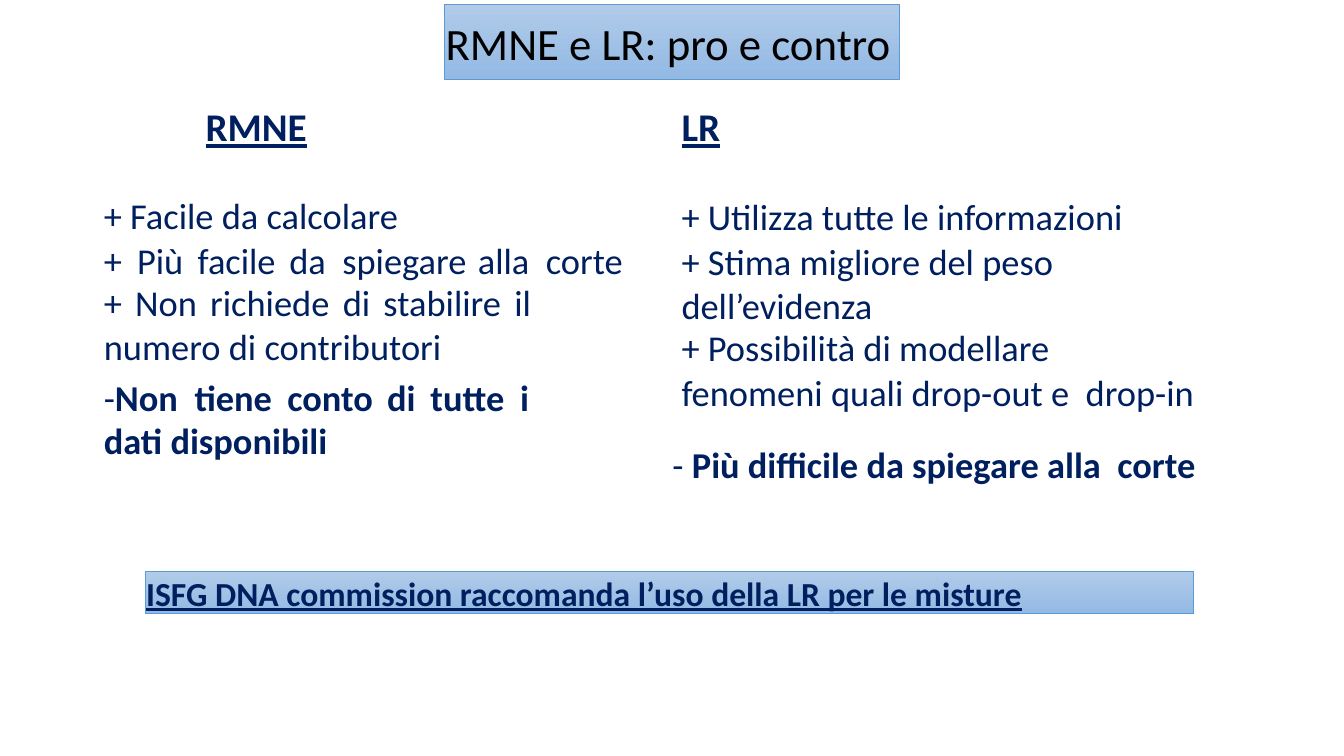
"""Build a slide weighing the pros and cons of RMNE and LR."""
from lxml import etree
from pptx import Presentation
from pptx.dml.color import RGBColor
from pptx.enum.shapes import MSO_SHAPE
from pptx.enum.text import MSO_ANCHOR, PP_ALIGN
from pptx.oxml.ns import qn
from pptx.util import Inches, Pt

RECTANGLE = MSO_SHAPE.RECTANGLE
TOP, MIDDLE = MSO_ANCHOR.TOP, MSO_ANCHOR.MIDDLE
LEFT = PP_ALIGN.LEFT
BLACK = RGBColor(0x00, 0x00, 0x00)
NAVY = RGBColor(0x00, 0x1F, 0x5F)
LIGHT_BLUE = RGBColor(0xB1, 0xCB, 0xE9)
MID_BLUE = RGBColor(0x93, 0xB9, 0xE4)
BORDER_BLUE = RGBColor(0x5B, 0x9B, 0xD5)


def write_paragraph(p, plain, bold="", size=26, color=NAVY, line=None, before=1, tabs=(), gap=0):
    """Fill a paragraph; gap widens the spaces between its words, in points."""
    p.alignment = LEFT
    p.line_spacing = Pt(line) if line else None
    p.space_before = Pt(before)
    if tabs:
        tab_list = etree.SubElement(p._p.get_or_add_pPr(), qn("a:tabLst"))
        for tab in tabs:
            etree.SubElement(tab_list, qn("a:tab"), pos=str(Inches(tab)), algn="l")
    if gap:
        for i, word in enumerate(plain.split(" ")):
            if i:
                r = p.add_run()
                r.text = " "
                r.font._element.set("spc", str(round(gap * 100)))
            p.add_run().text = word
    else:
        p.text = plain
    if bold:
        r = p.add_run()
        r.text = bold
        r.font.bold = True
    for r in p.runs:
        r.font.name = "Calibri"
        r.font.size = Pt(size)
        r.font.color.rgb = color


def set_frame(s, anchor=TOP):
    """Wrap the text of a shape with almost no margins and return its frame."""
    tf = s.text_frame
    tf.word_wrap = True
    tf.margin_left = Inches(0.01)
    tf.margin_top = Inches(0.01)
    tf.margin_right = tf.margin_bottom = 0
    tf.vertical_anchor = anchor
    return tf


prs = Presentation()
prs.slide_width, prs.slide_height = Inches(13.33), Inches(7.5)
slide = prs.slides.add_slide(prs.slide_layouts[6])

banners = [
    ((4.41, 0.04, 4.51, 0.75), MIDDLE, "RMNE e LR: pro e contro", 32, BLACK, False),
    ((1.44, 5.67, 10.4, 0.42), TOP,
     "ISFG DNA commission raccomanda l’uso della LR per le misture", 24, NAVY, True),
]
for box, anchor, text, size, color, strong in banners:
    s = slide.shapes.add_shape(RECTANGLE, *map(Inches, box))
    s.shadow.inherit = False
    s.fill.gradient()
    s.fill.gradient_angle = 270
    for stop, stop_color, position in zip(s.fill.gradient_stops, (LIGHT_BLUE, MID_BLUE), (0, 1)):
        stop.color.rgb = stop_color
        stop.position = position
    s.line.color.rgb = BORDER_BLUE
    s.line.width = Pt(0.5)
    p = set_frame(s, anchor).paragraphs[0]
    write_paragraph(p, text, size=size, color=color)
    p.runs[0].font.bold = p.runs[0].font.underline = strong

for text, left, width in [("RMNE", 2.03, 1.04), ("LR", 6.75, 0.41)]:
    s = slide.shapes.add_textbox(Inches(left), Inches(1.01), Inches(width), Inches(0.5))
    p = set_frame(s).paragraphs[0]
    write_paragraph(p, text, size=28)
    p.runs[0].font.bold = p.runs[0].font.underline = True

arguments = [
    ((1.02, 1.91, 5.25, 1.76), [
        dict(plain="+ Facile da calcolare", line=31.1),
        dict(plain="+\tPiù\tfacile\tda  spiegare\talla  corte", line=31.3,
             tabs=(0.33, 0.93, 1.84, 3.71)),
        dict(plain="+ Non richiede di stabilire il", line=30, before=0, gap=3.5),
        dict(plain="numero di contributori", before=0),
    ]),
    ((1.02, 3.71, 4.77, 1.33), [
        dict(plain="-", bold="Non\ttiene\tconto\tdi\ttutte\ti  dati disponibili",
             tabs=(0.9, 1.82, 2.81, 3.24, 4.13)),
    ]),
    ((6.75, 1.92, 5.73, 2.2), [
        dict(plain="+ Utilizza tutte le informazioni", line=31.1),
        dict(plain="+ Stima migliore del peso\vdell’evidenza", line=31.3),
        dict(plain="+ Possibilità di modellare", line=30, before=0),
        dict(plain="fenomeni quali drop-out e  drop-in", line=31.3),
    ]),
    ((6.66, 4.38, 5.31, 0.45), [
        dict(plain="- ", bold="Più difficile da spiegare alla  corte"),
    ]),
]
for box, paragraphs in arguments:
    tf = set_frame(slide.shapes.add_textbox(*map(Inches, box)))
    for i, paragraph in enumerate(paragraphs):
        p = tf.add_paragraph() if i else tf.paragraphs[0]
        write_paragraph(p, **paragraph)

prs.save("out.pptx")
